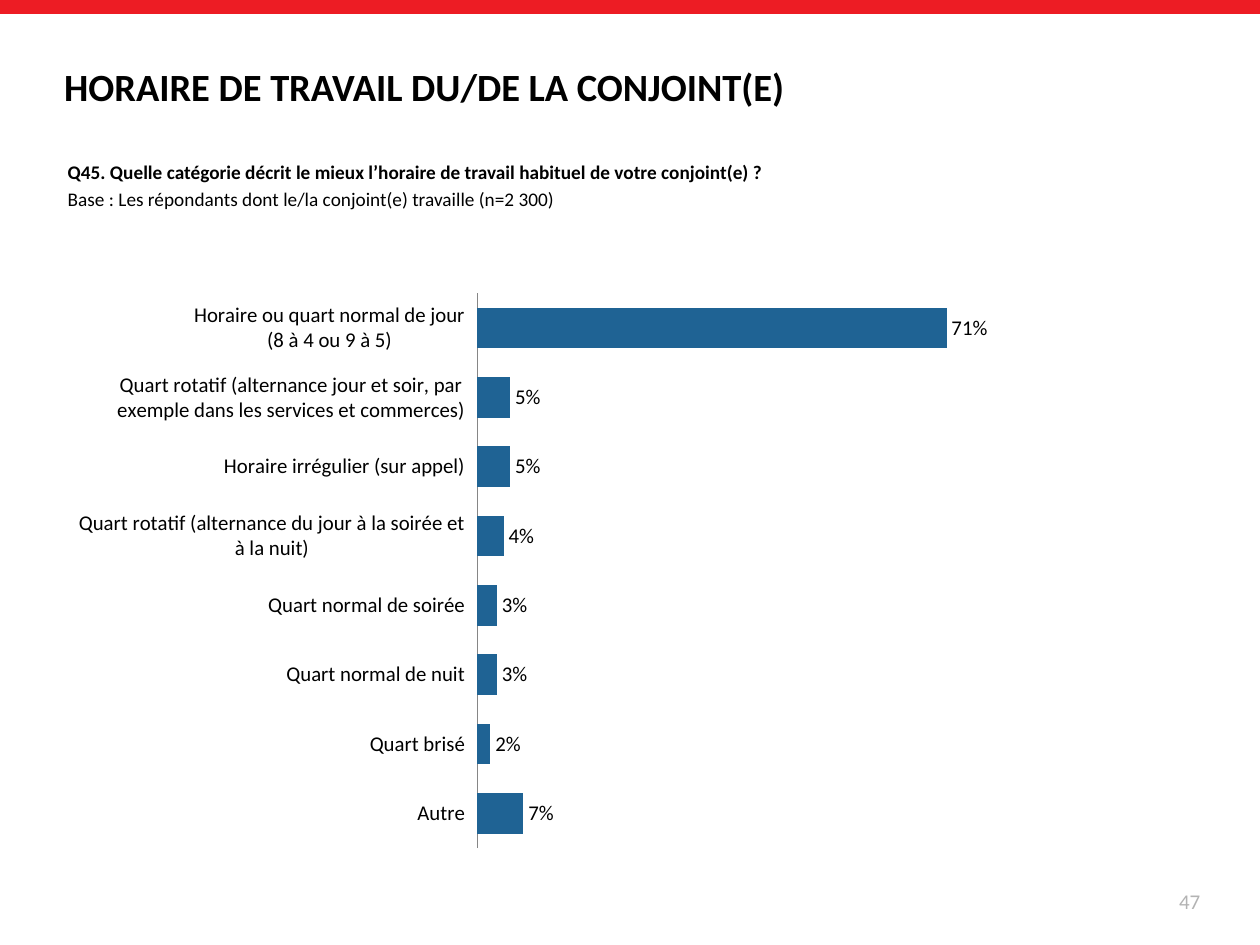
from dataclasses import dataclass

from lxml.etree import SubElement
from pptx import Presentation
from pptx.chart.chart import Chart
from pptx.chart.data import CategoryChartData
from pptx.dml.color import RGBColor
from pptx.enum.chart import XL_CHART_TYPE, XL_LABEL_POSITION, XL_TICK_LABEL_POSITION, XL_TICK_MARK
from pptx.enum.shapes import MSO_SHAPE
from pptx.enum.text import MSO_ANCHOR, MSO_AUTO_SIZE, PP_ALIGN
from pptx.oxml import parse_xml
from pptx.oxml.ns import nsdecls, qn
from pptx.shapes.base import BaseShape
from pptx.slide import Slide
from pptx.util import Pt

RED = RGBColor(0xED, 0x1C, 0x24)
BLUE = RGBColor(0x1F, 0x63, 0x94)
BLACK = RGBColor(0, 0, 0)
PALE_GRAY = RGBColor(0xB3, 0xB3, 0xB3)
AXIS_GRAY = RGBColor(0x86, 0x86, 0x86)
FONT = "Calibri"


@dataclass(frozen=True)
class Frame:
    left: float
    top: float
    width: float
    height: float

    def lengths(self) -> tuple[Pt, Pt, Pt, Pt]:
        return Pt(self.left), Pt(self.top), Pt(self.width), Pt(self.height)


@dataclass(frozen=True)
class Line:
    text: str
    size: float
    bold: bool = False
    color: RGBColor = BLACK


@dataclass(frozen=True)
class Share:
    schedule: str
    value: float


QUESTION = [
    Line("Q45. Quelle catégorie décrit le mieux l’horaire de travail habituel de votre conjoint(e) ?", 11, True),
    Line("Base : Les répondants dont le/la conjoint(e) travaille (n=2 300)", 11),
]
SHARES = [
    Share("Horaire ou quart normal de jour\n(8 à 4 ou 9 à 5)", 0.71),
    Share("Quart rotatif (alternance jour et soir, par exemple dans les services et commerces)", 0.05),
    Share("Horaire irrégulier (sur appel)", 0.05),
    Share("Quart rotatif (alternance du jour à la soirée et à la nuit)", 0.04),
    Share("Quart normal de soirée", 0.03),
    Share("Quart normal de nuit", 0.03),
    Share("Quart brisé", 0.02),
    Share("Autre", 0.07),
]


def write_lines(box: BaseShape, frame: Frame, lines: list[Line], align: PP_ALIGN, anchor: MSO_ANCHOR) -> None:
    box.left, box.top, box.width, box.height = frame.lengths()
    text_frame = box.text_frame
    text_frame.word_wrap = True
    text_frame.auto_size = MSO_AUTO_SIZE.NONE
    text_frame.vertical_anchor = anchor
    text_frame.text = "\n".join(line.text for line in lines)
    for index, (para, line) in enumerate(zip(text_frame.paragraphs, lines)):
        para.alignment = align
        para.space_before = Pt(0.2 * line.size if index else 0)
        properties = para._p.get_or_add_pPr()
        properties.set("marL", "0")
        properties.set("indent", "0")
        SubElement(properties, qn("a:buNone"))
        for span in para.runs:
            span.font.name = FONT
            span.font.size = Pt(line.size)
            span.font.bold = line.bold
            span.font.color.rgb = line.color


def place_plot(chart: Chart, left: float, top: float, width: float, height: float) -> None:
    plot_area = chart._chartSpace.chart.plotArea
    for layout in plot_area.findall(qn("c:layout")):
        plot_area.remove(layout)
    plot_area.insert(0, parse_xml(
        f'<c:layout {nsdecls("c")}><c:manualLayout><c:layoutTarget val="inner"/>'
        f'<c:xMode val="edge"/><c:yMode val="edge"/><c:x val="{left}"/><c:y val="{top}"/>'
        f'<c:w val="{width}"/><c:h val="{height}"/></c:manualLayout></c:layout>'
    ))


def add_schedule_chart(page: Slide, frame: Frame, shares: list[Share]) -> None:
    data = CategoryChartData(number_format="0%")
    data.categories = [share.schedule for share in shares]
    data.add_series("Répondants", [share.value for share in shares])
    chart = page.shapes.add_chart(XL_CHART_TYPE.BAR_CLUSTERED, *frame.lengths(), data).chart
    chart.has_legend = False
    chart.has_title = False
    chart.font.name = FONT
    chart.font.size = Pt(12)
    chart.font.color.rgb = BLACK
    place_plot(chart, 0.37, 0.06, 0.63, 0.94)

    schedules = chart.category_axis
    schedules.reverse_order = True
    schedules.major_tick_mark = XL_TICK_MARK.NONE
    schedules.tick_label_position = XL_TICK_LABEL_POSITION.LOW
    schedules.format.line.color.rgb = AXIS_GRAY
    schedules.format.line.width = Pt(0.75)
    percentages = chart.value_axis
    percentages.minimum_scale = 0
    percentages.maximum_scale = 1
    percentages.has_major_gridlines = False
    percentages.visible = False

    plot = chart.plots[0]
    plot.gap_width = 70
    plot.vary_by_categories = False
    fill = plot.series[0].format.fill
    fill.solid()
    fill.fore_color.rgb = BLUE
    plot.has_data_labels = True
    labels = plot.data_labels
    labels.show_value = True
    labels.number_format = "0%"
    labels.number_format_is_linked = False
    labels.position = XL_LABEL_POSITION.OUTSIDE_END


def add_top_band(page: Slide, frame: Frame) -> None:
    band = page.shapes.add_shape(MSO_SHAPE.RECTANGLE, *frame.lengths())
    band.shadow.inherit = False
    band.fill.solid()
    band.fill.fore_color.rgb = RED
    band.line.fill.background()


def main() -> None:
    deck = Presentation()
    deck.slide_width, deck.slide_height = Pt(720), Pt(540)
    page = deck.slides.add_slide(deck.slide_layouts[1])
    add_top_band(page, Frame(0, 0, 720, 8))

    number_frame = Frame(525, 500.5, 168, 29)
    number_box = page.shapes.add_textbox(*number_frame.lengths())
    write_lines(number_box, number_frame, [Line("47", 12, color=PALE_GRAY)], PP_ALIGN.RIGHT, MSO_ANCHOR.MIDDLE)
    write_lines(page.placeholders[1], Frame(31.5, 88, 579, 85), QUESTION, PP_ALIGN.JUSTIFY, MSO_ANCHOR.TOP)
    title = [Line("HORAIRE DE TRAVAIL DU/DE LA CONJOINT(E)", 22, True)]
    write_lines(page.shapes.title, Frame(29.5, 30.5, 551.5, 37.5), title, PP_ALIGN.LEFT, MSO_ANCHOR.MIDDLE)
    add_schedule_chart(page, Frame(45, 147.5, 605.5, 337.5), SHARES)
    deck.save("out.pptx")


if __name__ == "__main__":
    main()
